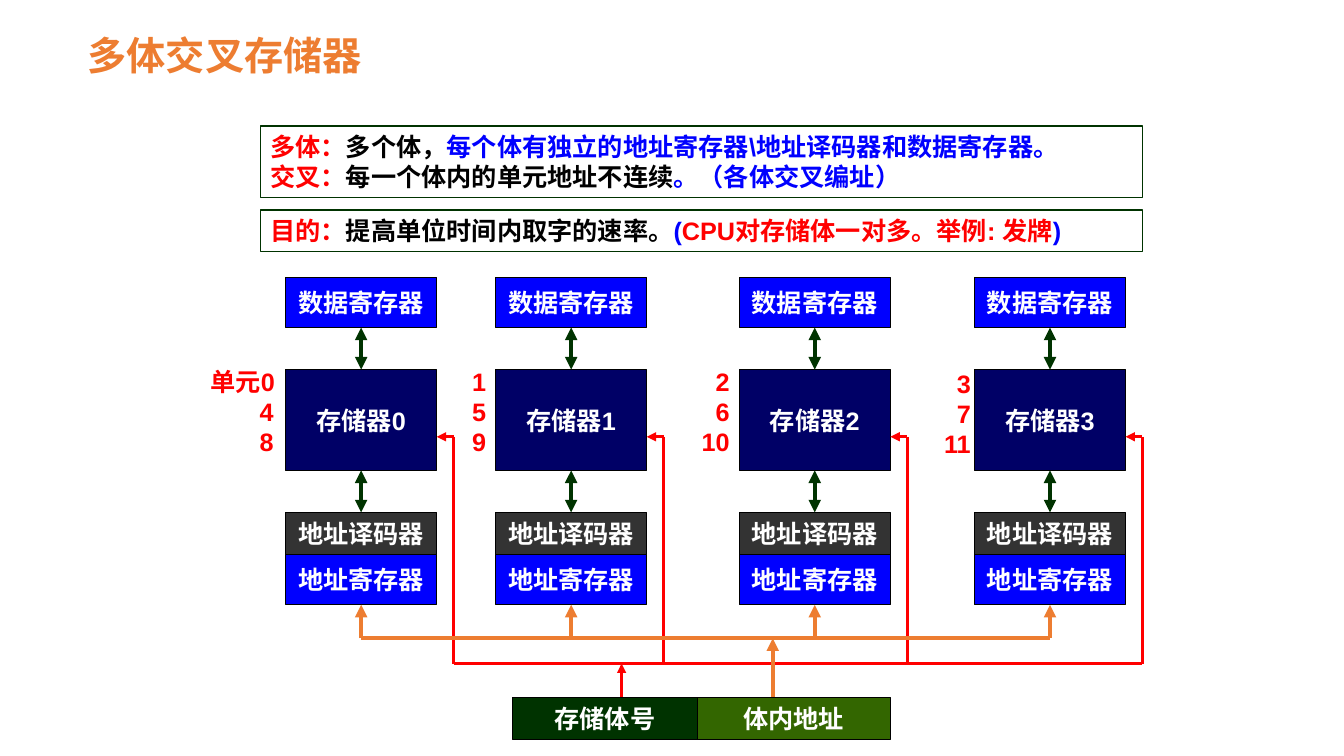
import pptx
import pptx.util
import pptx.dml.color
import pptx.enum.shapes
import pptx.enum.text
import pptx.oxml.ns
import lxml.etree

Pt = pptx.util.Pt
ALIGN = pptx.enum.text.PP_ALIGN
ANCHOR = pptx.enum.text.MSO_ANCHOR

COLORS = {
    "red": "FF0000", "blue": "0000FF", "navy": "000066", "gray": "333333",
    "green": "003300", "olive": "336600", "orange": "ED7D31",
    "black": "000000", "white": "FFFFFF",
}

TITLE = "多体交叉存储器"
# Each note: top, height, paragraphs of (text, colour) runs
NOTES = [
    (90, 51, [
        [("多体：", "red"), ("多个体，", "black"),
         ("每个体有独立的地址寄存器\\地址译码器和数据寄存器。", "blue")],
        [("交叉：", "red"), ("每一个体内的单元地址不连续", "black"),
         ("。（各体交叉编址）", "blue")],
    ]),
    (150, 29.5, [
        [("目的：", "red"), ("提高单位时间内取字的速率。", "black"), ("(", "blue"),
         ("CPU对存储体一对多。举例: 发牌", "red"), (")", "blue")],
    ]),
]
# Each bank: left edge, unit labels, label box (left, top, width)
BANKS = [
    (204, ["单元0", "4", "8"], (143.3, 258, 84)),
    (354, ["1", "5", "9"], (330, 258, 24.3)),
    (528, ["2", "6", "10"], (494, 258, 34.3)),
    (696, ["3", "7", "11"], (666, 259.2, 34.5)),
]
# Each part of a bank: text, top, height, fill
PARTS = [
    ("数据寄存器", 198, 36, "blue"),
    ("存储器{}", 264, 72, "navy"),
    ("地址译码器", 366, 30, "gray"),
    ("地址寄存器", 396, 36, "blue"),
]
LINKS = [(234, 264), (336, 366)]
# Each address field: text, left, width, fill
FIELDS = [("存储体号", 366, 132, "green"), ("体内地址", 498, 138, "olive")]

BANK_W = 108
RISER_GAP = 12
SELECT_Y = 312
BANK_BOTTOM = 432
ORANGE_BUS_Y = 456
RED_BUS_Y = 474
FIELD_Y = 498
FIELD_H = 30
UNIT_INDENT = 35

prs = pptx.Presentation()
prs.slide_width, prs.slide_height = Pt(960), Pt(540)
slide = prs.slides.add_slide(prs.slide_layouts[6])


def rgb(name):
    return pptx.dml.color.RGBColor.from_string(COLORS[name])


def write(sp, paragraphs, align, anchor, wrap, size=18, font="Arial"):
    tf = sp.text_frame
    tf.word_wrap = wrap
    tf.vertical_anchor = anchor
    for i, runs in enumerate(paragraphs):
        p = tf.paragraphs[0] if i == 0 else tf.add_paragraph()
        p.alignment = align
        for text, color in runs:
            r = p.add_run()
            r.text = text
            r.font.size = Pt(size)
            r.font.name = font
            r.font.bold = True
            r.font.color.rgb = rgb(color)


def add_text(x, y, w, h, paragraphs, align=ALIGN.LEFT, wrap=True, **font):
    sp = slide.shapes.add_textbox(Pt(x), Pt(y), Pt(w), Pt(h))
    write(sp, paragraphs, align, ANCHOR.TOP, wrap, **font)
    return sp


def add_rect(x, y, w, h, line, fill=None):
    sp = slide.shapes.add_shape(
        pptx.enum.shapes.MSO_SHAPE.RECTANGLE, Pt(x), Pt(y), Pt(w), Pt(h))
    sp.shadow.inherit = False
    if fill:
        sp.fill.solid()
        sp.fill.fore_color.rgb = rgb(fill)
    else:
        sp.fill.background()
    sp.line.color.rgb = rgb(line)
    sp.line.width = Pt(0.75)
    return sp


def add_block(x, y, w, h, text, fill):
    sp = add_rect(x, y, w, h, "black", fill)
    write(sp, [[(text, "white")]], ALIGN.CENTER, ANCHOR.MIDDLE, False)


def add_line(x1, y1, x2, y2, color, width, ends=()):
    """Draw a straight line; ends holds headEnd and/or tailEnd for arrowheads."""
    line = slide.shapes.add_connector(
        pptx.enum.shapes.MSO_CONNECTOR.STRAIGHT, Pt(x1), Pt(y1), Pt(x2), Pt(y2))
    line.line.color.rgb = rgb(color)
    line.line.width = Pt(width)
    qn = pptx.oxml.ns.qn
    ln = line.line._get_or_add_ln()
    for end in ends:
        lxml.etree.SubElement(ln, qn("a:" + end), type="triangle")
    lxml.etree.SubElement(line._element.spPr, qn("a:effectLst"))


add_text(55.5, 18.7, 456, 41, [[(TITLE, "orange")]],
         size=28, font="Times New Roman")

for top, height, paragraphs in NOTES:
    note = add_rect(186, top, 630, height, "green")
    write(note, paragraphs, ALIGN.LEFT, ANCHOR.TOP, True)

for number, (left, units, (label_x, label_y, label_w)) in enumerate(BANKS):
    center = left + BANK_W / 2
    for text, top, height, fill in PARTS:
        add_block(left, top, BANK_W, height, text.format(number), fill)
    for start, end in LINKS:
        add_line(center, start, center, end, "green", 3, ("headEnd", "tailEnd"))

    first = number == 0
    label = add_text(label_x, label_y, label_w, 72, [[(u, "red")] for u in units],
                     ALIGN.LEFT if first else ALIGN.RIGHT, first)
    if first:
        for p in label.text_frame.paragraphs[1:]:
            p._p.get_or_add_pPr().set("marL", str(Pt(UNIT_INDENT)))

    right = left + BANK_W
    riser = right + RISER_GAP
    add_line(riser, SELECT_Y, right, SELECT_Y, "red", 2.25, ("tailEnd",))
    add_line(riser, SELECT_Y, riser, RED_BUS_Y, "red", 2.25)
    add_line(center, ORANGE_BUS_Y, center, BANK_BOTTOM, "orange", 3, ("tailEnd",))

first_left, last_left = BANKS[0][0], BANKS[-1][0]
riser_dx = BANK_W + RISER_GAP
add_line(first_left + riser_dx, RED_BUS_Y, last_left + riser_dx, RED_BUS_Y,
         "red", 2.25)
add_line(first_left + BANK_W / 2, ORANGE_BUS_Y, last_left + BANK_W / 2,
         ORANGE_BUS_Y, "orange", 3)

for text, left, width, fill in FIELDS:
    add_block(left, FIELD_Y, width, FIELD_H, text, fill)
add_line(444, FIELD_Y, 444, RED_BUS_Y, "red", 2.25, ("tailEnd",))
add_line(552, FIELD_Y, 552, ORANGE_BUS_Y, "orange", 3, ("tailEnd",))

prs.save("out.pptx")
